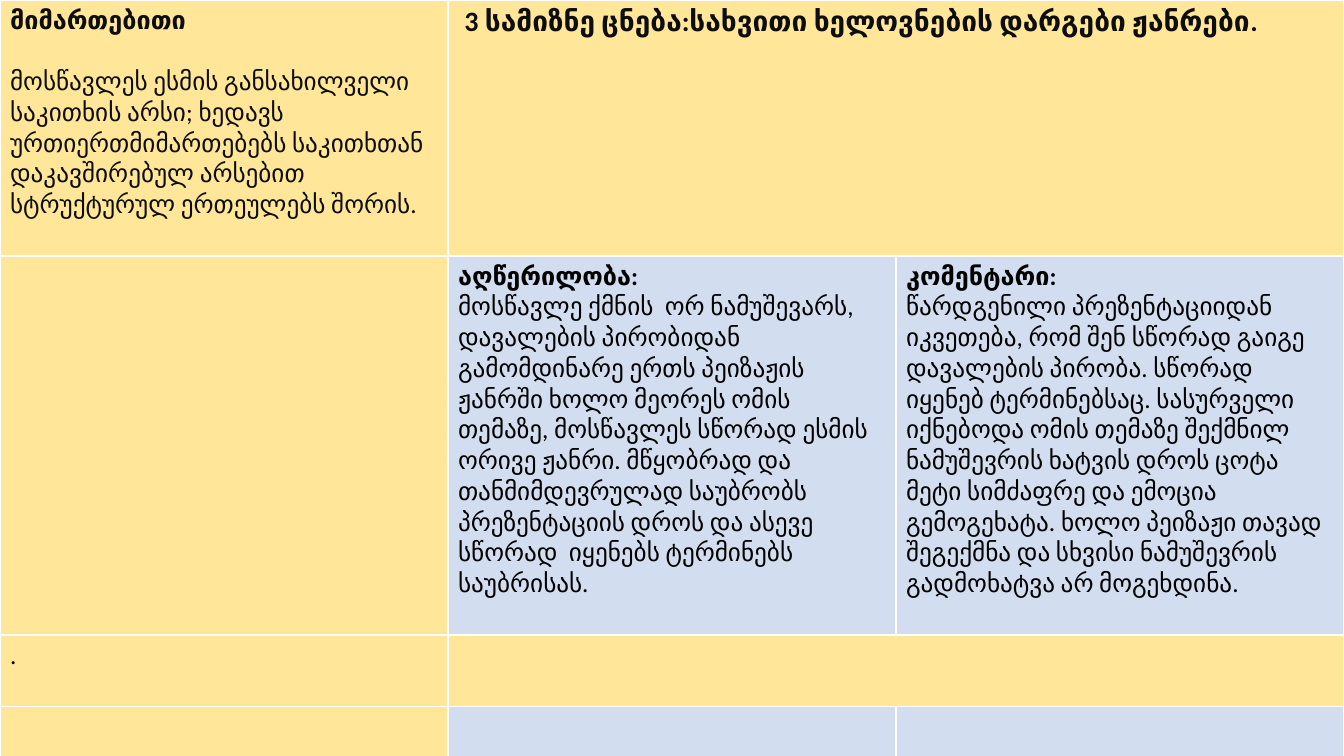
import pptx
import pptx.util
import pptx.dml.color
import pptx.oxml
import pptx.oxml.ns

Inches = pptx.util.Inches
Pt = pptx.util.Pt
HUES = {"sand": "FFE699", "sky": "D2DEEF", "rule": "FFFFFF", "dark": "0D0D0D", "ink": "000000"}
ROWS = [2.54, 3.76, 0.71, 1.77]
WIDE = 13.33
FILLS = [
    ["sand", "sand", "sand"],
    ["sand", "sky", "sky"],
    ["sand", "sand", "sand"],
    ["sand", "sky", "sky"],
]
GOAL = "მოსწავლეს ესმის განსახილველი საკითხის არსი; ხედავს ურთიერთმიმართებებს საკითხთან დაკავშირებულ არსებით სტრუქტურულ ერთეულებს შორის."
TITLE = " 3 სამიზნე ცნება:სახვითი ხელოვნების დარგები ჟანრები."
TASK = "მოსწავლე ქმნის  ორ ნამუშევარს, დავალების პირობიდან გამომდინარე ერთს პეიზაჟის ჟანრში ხოლო მეორეს ომის თემაზე, მოსწავლეს სწორად ესმის ორივე ჟანრი. მწყობრად და თანმიმდევრულად საუბრობს პრეზენტაციის დროს და ასევე სწორად  იყენებს ტერმინებს საუბრისას."
NOTE = "წარდგენილი პრეზენტაციიდან იკვეთება, რომ შენ სწორად გაიგე დავალების პირობა. სწორად იყენებ ტერმინებსაც. სასურველი იქნებოდა ომის თემაზე შექმნილ ნამუშევრის ხატვის დროს ცოტა მეტი სიმძაფრე და ემოცია გემოგეხატა. ხოლო პეიზაჟი თავად შეგექმნა და სხვისი ნამუშევრის გადმოხატვა არ მოგეხდინა."


def paint(fill, hue):
    fill.solid()
    fill.fore_color.rgb = pptx.dml.color.RGBColor.from_string(HUES[hue])


def write(cell, text, size=18, bold=False, hue="ink", gap=0):
    frame = cell.text_frame
    para = frame.add_paragraph() if cell.text else frame.paragraphs[0]
    para.space_before = Pt(gap)
    run = para.add_run()
    run.text = text
    font = run.font
    font.name = "Calibri"
    font.size = Pt(size)
    font.bold = bold
    paint(font.fill, hue)


def edge(cell):
    props = cell._tc.get_or_add_tcPr()
    space = pptx.oxml.ns.nsdecls("a")
    for side in "LRTB":
        props.append(pptx.oxml.parse_xml(
            f'<a:ln{side} {space} w="12700"><a:solidFill>'
            f'<a:srgbClr val="{HUES["rule"]}"/></a:solidFill></a:ln{side}>'))


def grid(slide):
    count = len(FILLS[0])
    frame = slide.shapes.add_table(
        len(ROWS), count, 0, 0, Inches(WIDE), Inches(sum(ROWS)))
    table = frame.table
    for col in table.columns:
        col.width = Inches(WIDE / count)
    for row, tall, hues in zip(table.rows, ROWS, FILLS):
        row.height = Inches(tall)
        for cell, hue in zip(row.cells, hues):
            edge(cell)
            paint(cell.fill, hue)
    for row in (0, 2):
        table.cell(row, 1).merge(table.cell(row, 2))
    return table


def main():
    deck = pptx.Presentation()
    deck.slide_width = Inches(WIDE)
    deck.slide_height = Inches(7.5)
    slide = deck.slides.add_slide(deck.slide_layouts[6])
    table = grid(slide)
    goal = table.cell(0, 0)
    write(goal, "მიმართებითი", bold=True, hue="dark")
    write(goal, GOAL, hue="dark", gap=22)
    write(table.cell(0, 1), TITLE, size=20, bold=True, hue="dark")
    for col, head, body in ((1, "აღწერილობა:", TASK), (2, "კომენტარი:", NOTE)):
        write(table.cell(1, col), head, bold=True)
        write(table.cell(1, col), body)
    write(table.cell(2, 0), ".")
    deck.save("out.pptx")


if __name__ == "__main__":
    main()
